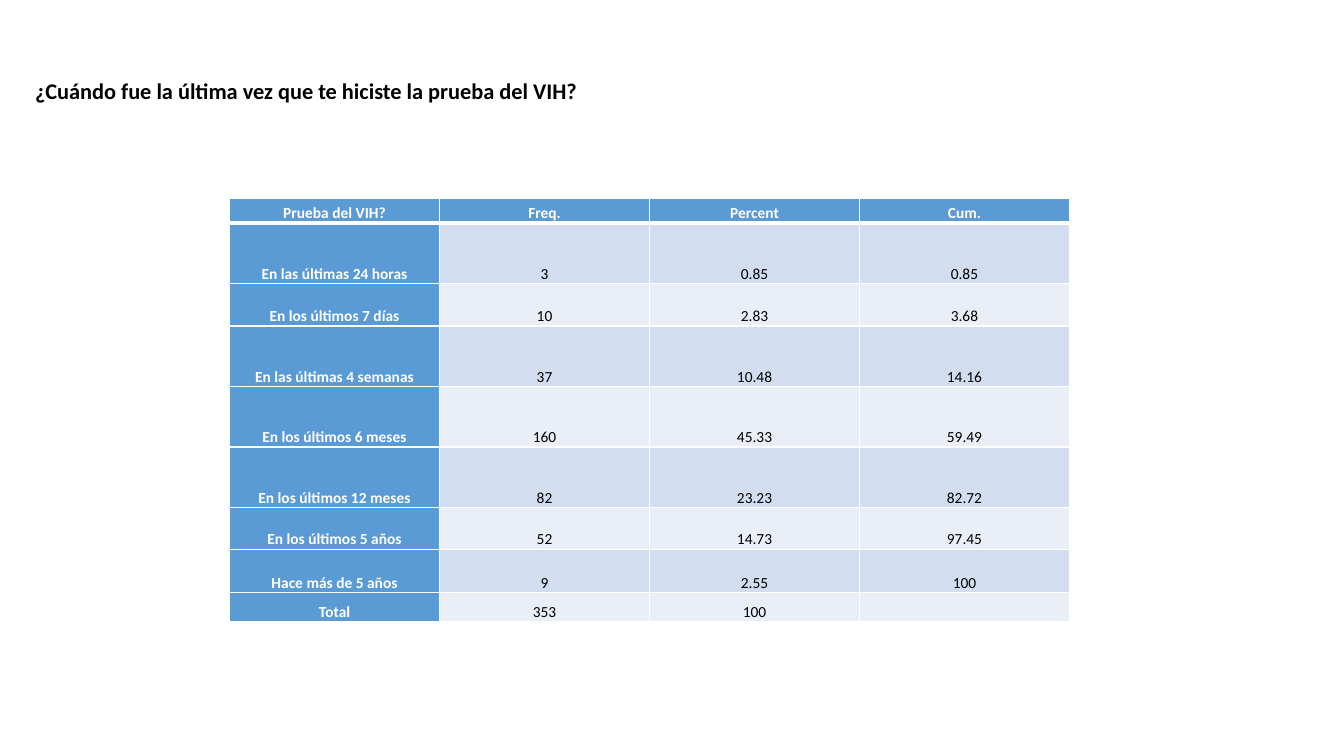
"""Build a slide with a frequency table of the latest HIV test."""
from dataclasses import dataclass

from lxml import etree
from pptx import Presentation
from pptx.dml.color import RGBColor
from pptx.enum.text import MSO_ANCHOR, PP_ALIGN
from pptx.oxml.ns import qn
from pptx.slide import Slide
from pptx.table import _Cell
from pptx.text.text import _Paragraph
from pptx.util import Pt

BOTTOM, MIDDLE = MSO_ANCHOR.BOTTOM, MSO_ANCHOR.MIDDLE
CENTER = PP_ALIGN.CENTER
WHITE = RGBColor(0xFF, 0xFF, 0xFF)
BLACK = RGBColor(0x00, 0x00, 0x00)
BLUE = RGBColor(0x5B, 0x9B, 0xD5)
BANDS = (RGBColor(0xEA, 0xEF, 0xF7), RGBColor(0xD2, 0xDE, 0xEF))
FONT = "Calibri"
TITLE_SIZE, CELL_SIZE = 16, 11
THIN, THICK = 1, 3
COL_WIDTH = 150


@dataclass(frozen=True)
class Row:
    """One table row: its height in points and its cell texts."""
    height: float
    texts: tuple[str, ...]


ROWS = (
    Row(17.2, ("Prueba del VIH?", "Freq.", "Percent", "Cum.")),
    Row(43.2, ("En las últimas 24 horas", "3", "0.85", "0.85")),
    Row(30.5, ("En los últimos 7 días", "10", "2.83", "3.68")),
    Row(43.2, ("En las últimas 4 semanas", "37", "10.48", "14.16")),
    Row(43.2, ("En los últimos 6 meses", "160", "45.33", "59.49")),
    Row(43.2, ("En los últimos 12 meses", "82", "23.23", "82.72")),
    Row(29.8, ("En los últimos 5 años", "52", "14.73", "97.45")),
    Row(31, ("Hace más de 5 años", "9", "2.55", "100")),
    Row(21, ("Total", "353", "100", "")),
)


def format_runs(p: _Paragraph, size: float, color: RGBColor, bold: bool) -> None:
    """Set the font of every run in a paragraph."""
    for r in p.runs:
        r.font.name = FONT
        r.font.size = Pt(size)
        r.font.bold = bold
        r.font.color.rgb = color


def add_borders(cell: _Cell, top: float, bottom: float) -> None:
    """Draw white borders around a cell."""
    tc_pr = cell._tc.get_or_add_tcPr()
    widths = {"a:lnL": THIN, "a:lnR": THIN, "a:lnT": top, "a:lnB": bottom}
    for tag, width in widths.items():
        ln = etree.SubElement(tc_pr, qn(tag), w=str(Pt(width)))
        fill = etree.SubElement(ln, qn("a:solidFill"))
        etree.SubElement(fill, qn("a:srgbClr"), val=str(WHITE))


def fill_cell(cell: _Cell, text: str, row: int, col: int) -> None:
    """Write and style one cell by its place in the table."""
    heading = row == 0 or col == 0
    add_borders(cell, THICK if row == 1 else THIN, THICK if row == 0 else THIN)
    cell.fill.solid()
    cell.fill.fore_color.rgb = BLUE if heading else BANDS[row % 2]
    cell.vertical_anchor = BOTTOM
    cell.margin_left = cell.margin_right = Pt(3.6)
    cell.margin_top = cell.margin_bottom = Pt(0)
    p = cell.text_frame.paragraphs[0]
    p.text = text
    p.alignment = CENTER
    p.line_spacing = 1.15
    format_runs(p, CELL_SIZE, WHITE if heading else BLACK, heading)
    if not text:
        etree.SubElement(p._p, qn("a:endParaRPr"), sz=str(CELL_SIZE * 100))


def add_frequency_table(s: Slide) -> None:
    """Add the table of answers."""
    n_cols = len(ROWS[0].texts)
    height = sum(row.height for row in ROWS)
    table = s.shapes.add_table(len(ROWS), n_cols, Pt(164), Pt(142),
                               Pt(COL_WIDTH * n_cols), Pt(height)).table
    for column in table.columns:
        column.width = Pt(COL_WIDTH)
    for i, row in enumerate(ROWS):
        table.rows[i].height = Pt(row.height)
        for j, text in enumerate(row.texts):
            fill_cell(table.cell(i, j), text, i, j)


def add_title(s: Slide) -> None:
    """Add the question above the table."""
    sp = s.shapes.add_textbox(Pt(18), Pt(29.5), Pt(623), Pt(70.6))
    tf = sp.text_frame
    tf.word_wrap = True
    tf.vertical_anchor = MIDDLE
    tf.text = "¿Cuándo fue la última vez que te hiciste la prueba del VIH?"
    format_runs(tf.paragraphs[0], TITLE_SIZE, BLACK, True)


def main() -> None:
    """Build and save the presentation."""
    prs = Presentation()
    prs.slide_width, prs.slide_height = Pt(960), Pt(540)
    s = prs.slides.add_slide(prs.slide_layouts[6])
    add_frequency_table(s)
    add_title(s)
    prs.save("out.pptx")


if __name__ == "__main__":
    main()
